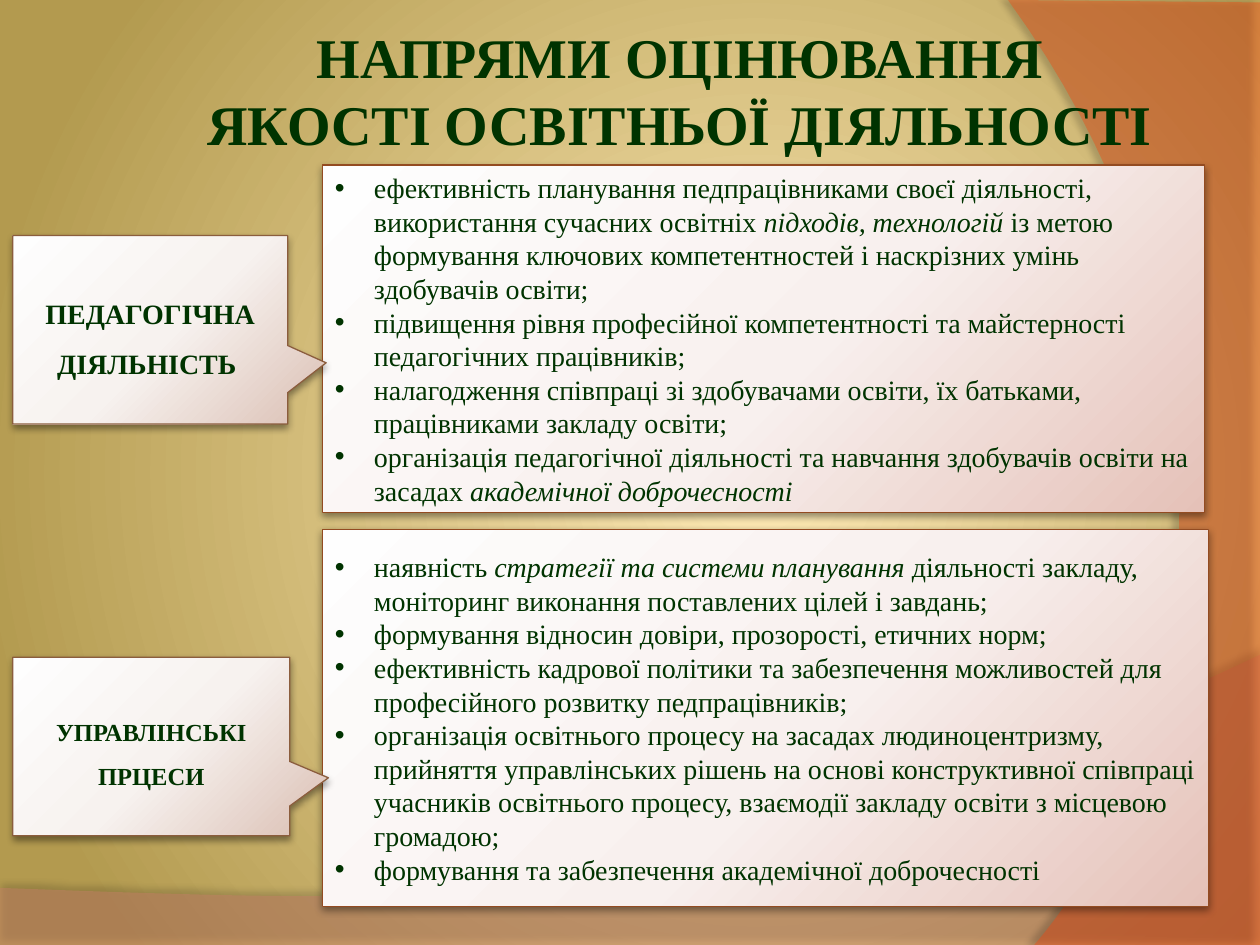
import dataclasses

import pptx
import pptx.dml.color
import pptx.enum.shapes
import pptx.enum.text
import pptx.oxml.ns
import pptx.util
from lxml import etree

Cm, Pt = pptx.util.Cm, pptx.util.Pt
qn = pptx.oxml.ns.qn
SLIDE_WIDTH, SLIDE_HEIGHT = 25.4, 19.05


@dataclasses.dataclass(frozen=True)
class Theme:
    font: str = "Times New Roman"
    text: str = "003300"
    title_size: int = 32
    body_size: int = 16
    small_size: int = 14
    line_width: float = 0.75
    indent: float = 0.79
    # Gradient stops: position, colour, opacity in percent
    background: tuple = ((0, "FFEBB6", 19), (100, "B39A4F", 100))
    panel_fill: tuple = ((0, "FEFEFE", 100), (55, "F8F0EE", 100), (100, "E5C1B8", 100))
    panel_line: str = "934B21"
    label_fill: tuple = ((0, "FEFEFE", 100), (55, "F7F2EF", 100), (100, "DFC7BD", 100))
    label_line: str = "8B5D3D"
    # Shadows: opacity in percent, blur and distance in points, direction in degrees
    box_shadow: tuple = (40, 4.1, 2, 90)
    wave_fill: tuple = ("C77E69", 45)
    wave_shadow: tuple = (35, 4, 3.5, 270)
    side_fill: tuple = ("F4480F", 40)
    side_shadow: tuple = (45, 4, 4, 180)


def rgb(colour):
    return pptx.dml.color.RGBColor.from_string(colour)


def child(parent, tag, **attributes):
    values = {name: str(value) for name, value in attributes.items()}
    return etree.SubElement(parent, qn(tag), values)


def add_colour(parent, colour, opacity):
    element = child(parent, "a:srgbClr", val=colour)
    if opacity < 100:
        child(element, "a:alpha", val=opacity * 1000)


def curve(start, control_1, control_2, end, steps=40):
    """Return points along a cubic Bezier curve."""
    points = []
    for step in range(steps + 1):
        t = step / steps
        weights = ((1 - t) ** 3, 3 * t * (1 - t) ** 2, 3 * t * t * (1 - t), t ** 3)
        corners = (start, control_1, control_2, end)
        points.append(tuple(sum(w * corner[axis] for w, corner in zip(weights, corners))
                            for axis in (0, 1)))
    return points


class SlideBuilder:
    def __init__(self, slide, theme):
        self.slide = slide
        self.theme = theme

    def gradient(self, fill, owner, stops, focus):
        """Give fill a circular gradient; focus is left, top, right, bottom in percent."""
        fill.gradient()
        gradient = owner.find(".//" + qn("a:gradFill"))
        for element in list(gradient):
            gradient.remove(element)
        stop_list = child(gradient, "a:gsLst")
        for position, colour, opacity in stops:
            add_colour(child(stop_list, "a:gs", pos=position * 1000), colour, opacity)
        circle = child(gradient, "a:path", path="circle")
        sides = {side: edge * 1000 for side, edge in zip("ltrb", focus)}
        child(circle, "a:fillToRect", **sides)

    def background(self):
        self.gradient(self.slide.background.fill, self.slide.element,
                      self.theme.background, (60, 50, 40, 50))

    def shadow(self, shape, settings):
        opacity, blur, distance, direction = settings
        shape.shadow.inherit = False
        effects = shape.element.spPr.find(qn("a:effectLst"))
        outer = child(effects, "a:outerShdw", blurRad=Pt(blur), dist=Pt(distance),
                      dir=direction * 60000, rotWithShape=0)
        add_colour(outer, "000000", opacity)

    def decoration(self, points, colour_and_opacity, shadow):
        corners = [(Cm(x), Cm(y)) for x, y in points]
        builder = self.slide.shapes.build_freeform(*corners[0])
        builder.add_line_segments(corners[1:], close=True)
        shape = builder.convert_to_shape()
        colour, opacity = colour_and_opacity
        shape.fill.solid()
        shape.fill.fore_color.rgb = rgb(colour)
        solid_colour = shape.element.spPr.find(".//" + qn("a:srgbClr"))
        child(solid_colour, "a:alpha", val=opacity * 1000)
        shape.line.fill.background()
        self.shadow(shape, shadow)

    def format_runs(self, paragraph, size, bold=False):
        for run in paragraph.runs:
            run.font.name = self.theme.font
            run.font.size = Pt(size)
            run.font.bold = bold
            run.font.color.rgb = rgb(self.theme.text)

    def title(self, text, left, top, width, height):
        title = self.slide.shapes.title
        title.left, title.top, title.width, title.height = map(Cm, (left, top, width, height))
        title.element.getparent().append(title.element)  # in front of the decorations
        frame = title.text_frame
        frame.text = text
        frame.auto_size = pptx.enum.text.MSO_AUTO_SIZE.NONE
        frame.vertical_anchor = pptx.enum.text.MSO_ANCHOR.TOP
        for paragraph in frame.paragraphs:
            paragraph.alignment = pptx.enum.text.PP_ALIGN.CENTER
            self.format_runs(paragraph, self.theme.title_size, bold=True)

    def box(self, kind, bounds, stops, line_colour):
        shape = self.slide.shapes.add_shape(kind, *map(Cm, bounds))
        self.gradient(shape.fill, shape.element, stops, (-40, -90, 140, 190))
        shape.line.color.rgb = rgb(line_colour)
        shape.line.width = Pt(self.theme.line_width)
        self.shadow(shape, self.theme.box_shadow)
        shape.text_frame.word_wrap = True
        shape.text_frame.vertical_anchor = pptx.enum.text.MSO_ANCHOR.MIDDLE
        return shape

    def panel(self, items, *bounds):
        """Add a bulleted box; text between asterisks is italic."""
        shape = self.box(pptx.enum.shapes.MSO_SHAPE.RECTANGLE, bounds,
                         self.theme.panel_fill, self.theme.panel_line)
        frame = shape.text_frame
        for index, item in enumerate(items):
            paragraph = frame.add_paragraph() if index else frame.paragraphs[0]
            paragraph.alignment = pptx.enum.text.PP_ALIGN.LEFT
            for part, text in enumerate(item.split("*")):
                if text:
                    run = paragraph.add_run()
                    run.text = text
                    run.font.italic = part % 2 == 1
            self.format_runs(paragraph, self.theme.body_size)
            indent = Cm(self.theme.indent)
            properties = paragraph._p.get_or_add_pPr()
            properties.set("marL", str(indent))
            properties.set("indent", str(-indent))
            child(properties, "a:buFont", typeface="Arial")
            child(properties, "a:buChar", char="•")

    def label(self, text, size, *bounds):
        shape = self.box(pptx.enum.shapes.MSO_SHAPE.RECTANGULAR_CALLOUT, bounds,
                         self.theme.label_fill, self.theme.label_line)
        shape.adjustments[0] = 0.64
        shape.adjustments[1] = 0.175
        paragraph = shape.text_frame.paragraphs[0]
        paragraph.text = text
        paragraph.alignment = pptx.enum.text.PP_ALIGN.CENTER
        paragraph.line_spacing = 1.5
        self.format_runs(paragraph, size, bold=True)


TEACHING = (
    "ефективність планування педпрацівниками своєї діяльності, використання сучасних освітніх "
    "*підходів, технологій *із метою формування ключових компетентностей і наскрізних умінь "
    "здобувачів освіти;",
    "підвищення рівня професійної компетентності та майстерності педагогічних працівників;",
    "налагодження співпраці зі здобувачами освіти, їх батьками, працівниками закладу освіти;",
    "організація педагогічної діяльності та навчання здобувачів освіти на засадах "
    "*академічної доброчесності*",
)
MANAGEMENT = (
    "наявність *стратегії та системи планування *діяльності закладу, моніторинг виконання "
    "поставлених цілей і завдань;",
    "формування відносин довіри, прозорості, етичних норм;",
    "ефективність кадрової політики та забезпечення можливостей для професійного розвитку "
    "педпрацівників;",
    "організація освітнього процесу на засадах людиноцентризму, прийняття управлінських рішень "
    "на основі конструктивної співпраці учасників освітнього процесу, взаємодії закладу освіти "
    "з місцевою громадою;",
    "формування та забезпечення академічної доброчесності",
)


def main():
    presentation = pptx.Presentation()
    presentation.slide_width, presentation.slide_height = Cm(SLIDE_WIDTH), Cm(SLIDE_HEIGHT)
    theme = Theme()
    builder = SlideBuilder(presentation.slides.add_slide(presentation.slide_layouts[5]), theme)
    builder.background()
    wave = curve((SLIDE_WIDTH, 13.2), (14.2, 18.52), (9.93, 18.26), (0, 17.9))
    builder.decoration([(0, SLIDE_HEIGHT), (SLIDE_WIDTH, SLIDE_HEIGHT)] + wave,
                       theme.wave_fill, theme.wave_shadow)
    side = curve((20.85, SLIDE_HEIGHT), (23.75, 15.72), (25.86, 7.62), (20.32, 0))
    builder.decoration([(SLIDE_WIDTH, 0.05), (SLIDE_WIDTH, SLIDE_HEIGHT)] + side,
                       theme.side_fill, theme.side_shadow)
    builder.title("НАПРЯМИ ОЦІНЮВАННЯ\nЯКОСТІ ОСВІТНЬОЇ ДІЯЛЬНОСТІ", 3.73, 0.33, 19.96, 3)
    builder.panel(TEACHING, 6.5, 3.33, 17.78, 7)
    builder.panel(MANAGEMENT, 6.5, 10.67, 17.86, 7.6)
    builder.label("ПЕДАГОГІЧНА ДІЯЛЬНІСТЬ ", theme.body_size, 0.26, 4.75, 5.54, 3.8)
    builder.label("УПРАВЛІНСЬКІ ПРЦЕСИ", theme.small_size, 0.26, 13.25, 5.58, 3.6)
    presentation.save("out.pptx")


if __name__ == "__main__":
    main()
